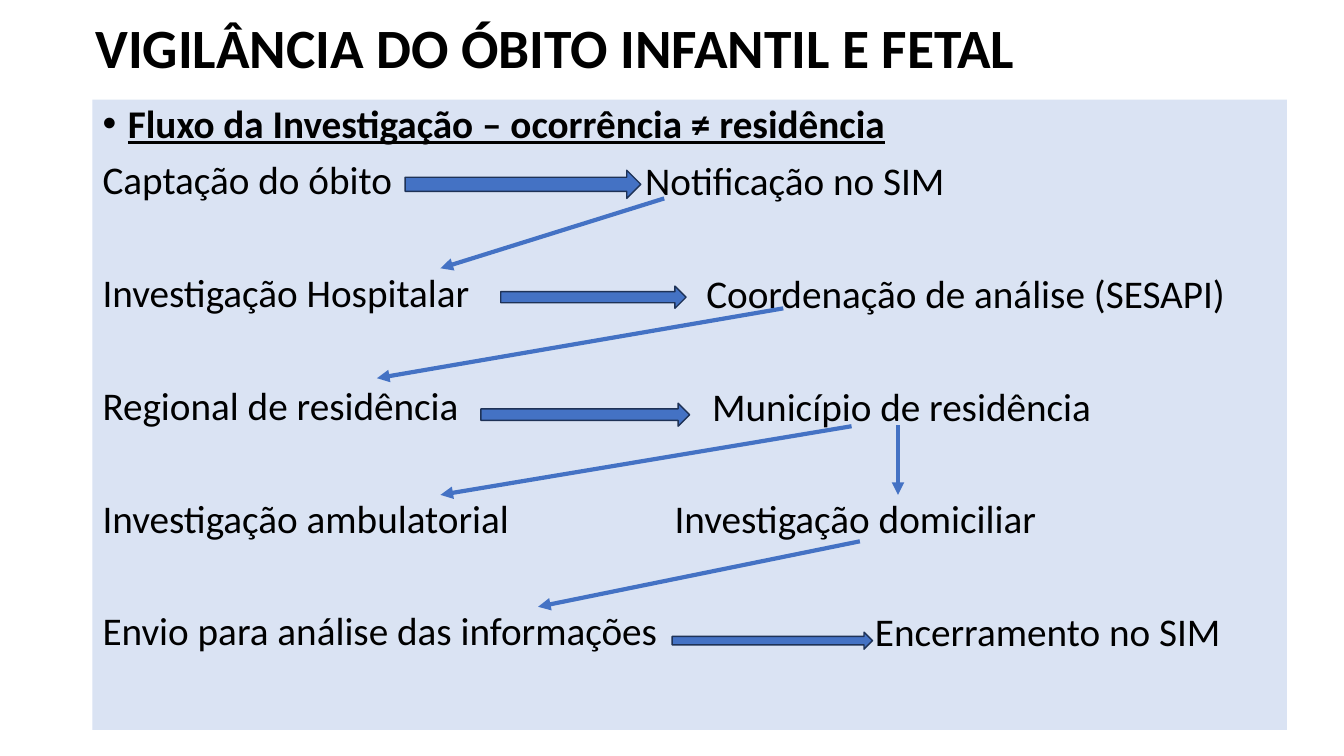
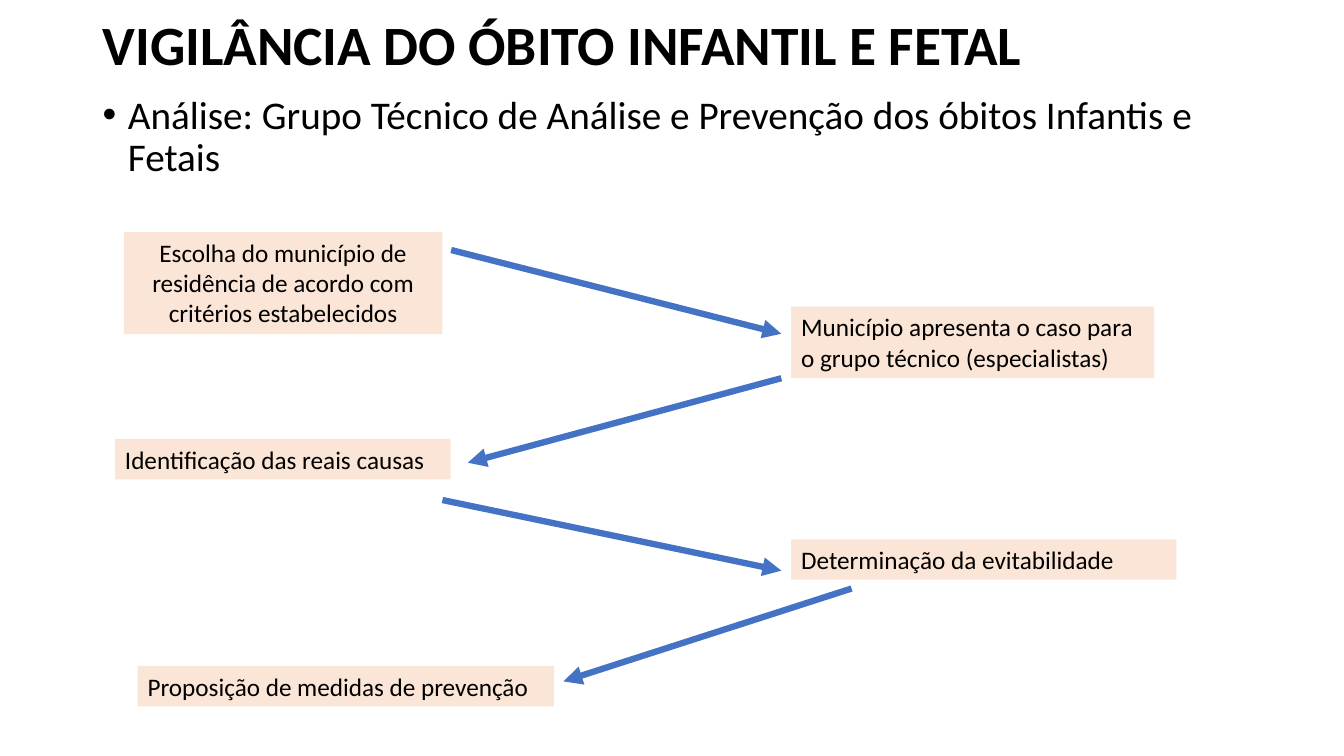
import pptx
import pptx.util
import pptx.dml.color
import pptx.enum.shapes
import pptx.enum.text
import pptx.oxml.ns
from lxml import etree

Cm, Pt = pptx.util.Cm, pptx.util.Pt
RGBColor = pptx.dml.color.RGBColor
PP_ALIGN = pptx.enum.text.PP_ALIGN
AUTO_SIZE = pptx.enum.text.MSO_AUTO_SIZE
ANCHOR = pptx.enum.text.MSO_ANCHOR
qn = pptx.oxml.ns.qn

# Shared style
FONT = "Calibri"
BLACK = RGBColor(0x00, 0x00, 0x00)
BLUE = RGBColor(0x44, 0x72, 0xC4)
DARK_BLUE = RGBColor(0x1E, 0x32, 0x56)
PALE_BLUE = RGBColor(0xDA, 0xE3, 0xF3)
PEACH = RGBColor(0xFB, 0xE5, 0xD6)
TITLE = "VIGILÂNCIA DO ÓBITO INFANTIL E FETAL"
LIST_SIZE = 28
LIST_GAP = 10
BULLET_INDENT = Cm(0.64)

# Investigation flow: left step, right step, left edge of the right step
FLOW_STEPS = [
    ("Captação do óbito", "Notificação no SIM", 16.26),
    ("Investigação Hospitalar", "Coordenação de análise (SESAPI)", 17.8),
    ("Regional de residência", "Município de residência", 17.95),
    ("Investigação ambulatorial", "Investigação domiciliar", 17.0),
    ("Envio para análise das informações", "Encerramento no SIM", 22.05),
]
FLOW_PANEL = (2.33, 2.51, 30.1, 15.88)
STEP_GAP = 50.3  # space between the left steps, in points
STEP_TOP, STEP_PITCH, STEP_HEIGHT = 4.08, 2.84, 1.08
FLOW_BLOCK_ARROWS = [  # left, top, width, height
    (10.21, 4.29, 5.94, 0.71),
    (12.62, 7.21, 4.67, 0.56),
    (12.12, 10.16, 5.26, 0.58),
    (16.94, 15.93, 5.05, 0.43),
]
FLOW_ARROWS = [  # from x, from y, to x, to y
    (16.74, 5.0, 11.1, 6.76),
    (19.74, 7.77, 9.5, 9.53),
    (21.46, 10.74, 11.1, 12.47),
    (22.63, 10.72, 22.63, 12.47),
    (21.67, 13.64, 13.56, 15.29),
]

# Analysis by the technical group: text, box, alignment
ANALYSIS_STEPS = [
    ("Escolha do município de residência de acordo com critérios estabelecidos",
     (3.12, 5.85, 8.03, 2.57), PP_ALIGN.CENTER),
    ("Município apresenta o caso para o grupo técnico (especialistas)",
     (19.94, 7.73, 9.15, 1.8), PP_ALIGN.LEFT),
    ("Identificação das reais causas", (2.9, 11.06, 8.46, 1.02), PP_ALIGN.LEFT),
    ("Determinação da evitabilidade", (19.94, 13.59, 9.71, 1.02), PP_ALIGN.LEFT),
    ("Proposição de medidas de prevenção", (3.47, 16.78, 10.49, 1.02), PP_ALIGN.LEFT),
]
ANALYSIS_ARROWS = [
    (11.37, 6.3, 19.69, 8.41),
    (19.69, 9.53, 11.79, 11.66),
    (11.15, 12.6, 19.69, 14.38),
    (21.46, 14.83, 14.2, 17.17),
]


def place(shape, box):
    shape.left, shape.top, shape.width, shape.height = map(Cm, box)


def set_font(paragraph, size, bold=False, underline=False):
    font = paragraph.font
    font.name, font.size = FONT, Pt(size)
    font.bold, font.underline = bold, underline
    font.color.rgb = BLACK


def add_titled_slide(deck, title_box, body_box):
    """Add a slide with the common title; return it and its body placeholder."""
    slide = deck.slides.add_slide(deck.slide_layouts[1])
    title, body = slide.shapes.title, slide.placeholders[1]
    for placeholder, box, anchor in ((title, title_box, ANCHOR.MIDDLE),
                                     (body, body_box, ANCHOR.TOP)):
        place(placeholder, box)
        placeholder.text_frame.auto_size = AUTO_SIZE.NONE
        placeholder.text_frame.vertical_anchor = anchor
    heading = title.text_frame.paragraphs[0]
    heading.text = TITLE
    heading.alignment = PP_ALIGN.LEFT
    heading.line_spacing = 0.9
    set_font(heading, 39.6, bold=True)
    return slide, body


def format_list_item(paragraph, text, gap=LIST_GAP, bullet=True, strong=False):
    paragraph.text = text
    paragraph.line_spacing = 0.9
    paragraph.space_before = Pt(gap)
    properties = paragraph._p.get_or_add_pPr()
    indent = int(BULLET_INDENT) if bullet else 0
    properties.set("marL", str(indent))
    properties.set("indent", str(-indent))
    if not bullet:
        etree.SubElement(properties, qn("a:buNone"))
    set_font(paragraph, LIST_SIZE, strong, strong)


def add_right_step(slide, text, left, top):
    """Put the second step of a line on the panel, up to its right edge."""
    width = FLOW_PANEL[0] + FLOW_PANEL[2] - left
    step = slide.shapes.add_textbox(*map(Cm, (left, top, width, STEP_HEIGHT)))
    frame = step.text_frame
    frame.word_wrap = True
    frame.margin_left = frame.margin_right = frame.margin_top = frame.margin_bottom = 0
    format_list_item(frame.paragraphs[0], text, gap=0, bullet=False)


def add_block_arrow(slide, box):
    arrow = slide.shapes.add_shape(pptx.enum.shapes.MSO_SHAPE.RIGHT_ARROW, *map(Cm, box))
    arrow.shadow.inherit = False
    arrow.fill.solid()
    arrow.fill.fore_color.rgb = BLUE
    arrow.line.color.rgb = DARK_BLUE
    arrow.line.width = Pt(1)


def add_arrow(slide, ends, width):
    arrow = slide.shapes.add_connector(pptx.enum.shapes.MSO_CONNECTOR.STRAIGHT,
                                       *map(Cm, ends))
    arrow.line.color.rgb = BLUE
    arrow.line.width = Pt(width)
    etree.SubElement(arrow.line._get_or_add_ln(), qn("a:tailEnd"), type="triangle")
    etree.SubElement(arrow._element.spPr, qn("a:effectLst"))


def add_step_box(slide, text, box, alignment):
    step = slide.shapes.add_textbox(*map(Cm, box))
    step.fill.solid()
    step.fill.fore_color.rgb = PEACH
    frame = step.text_frame
    frame.word_wrap = True
    frame.auto_size = AUTO_SIZE.SHAPE_TO_FIT_TEXT
    paragraph = frame.paragraphs[0]
    paragraph.text = text
    paragraph.alignment = alignment
    set_font(paragraph, 18)


def build_flow_slide(deck):
    slide, body = add_titled_slide(deck, (2.15, 0.66, 29.21, 1.22), FLOW_PANEL)
    body.fill.solid()
    body.fill.fore_color.rgb = PALE_BLUE
    frame = body.text_frame
    format_list_item(frame.paragraphs[0],
                     "Fluxo da Investigação – ocorrência ≠ residência", strong=True)
    for row, (left_step, right_step, left) in enumerate(FLOW_STEPS):
        format_list_item(frame.add_paragraph(), left_step,
                         gap=STEP_GAP if row else LIST_GAP, bullet=False)
        add_right_step(slide, right_step, left, STEP_TOP + row * STEP_PITCH)
    for box in FLOW_BLOCK_ARROWS:
        add_block_arrow(slide, box)
    for ends in FLOW_ARROWS:
        add_arrow(slide, ends, 3)


def build_analysis_slide(deck):
    slide, body = add_titled_slide(deck, (2.33, 0.51, 29.21, 1.37),
                                   (2.33, 2.28, 29.21, 14.88))
    format_list_item(body.text_frame.paragraphs[0],
                     "Análise: Grupo Técnico de Análise e Prevenção dos óbitos "
                     "Infantis e Fetais")
    for step in ANALYSIS_STEPS:
        add_step_box(slide, *step)
    for ends in ANALYSIS_ARROWS:
        add_arrow(slide, ends, 4.5)


def main():
    deck = pptx.Presentation()
    deck.slide_width, deck.slide_height = Cm(33.87), Cm(19.05)
    build_flow_slide(deck)
    build_analysis_slide(deck)
    deck.save("out.pptx")


if __name__ == "__main__":
    main()
